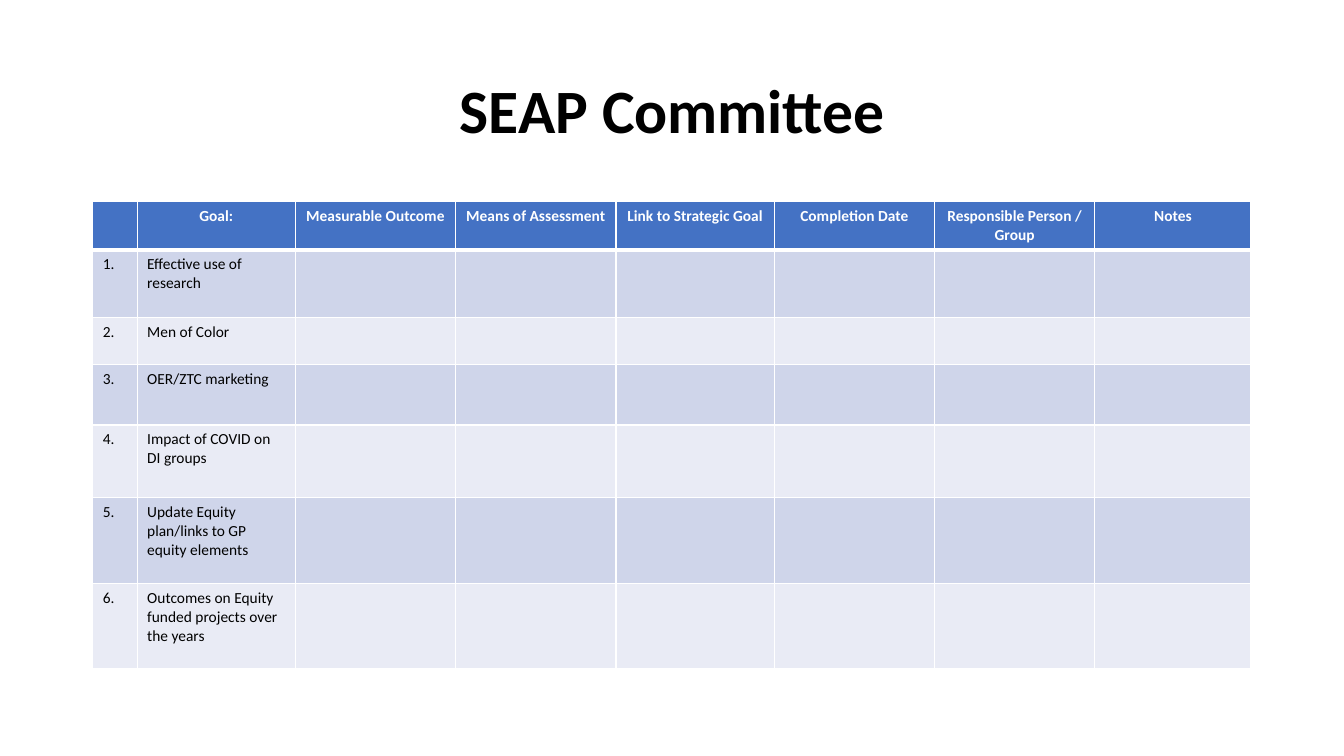
from dataclasses import dataclass

from lxml import etree
from pptx import Presentation
from pptx import util as u
from pptx.dml.color import RGBColor
from pptx.enum import text
from pptx.oxml.ns import qn

FONT = "Calibri"
COLORS = {
    "title": "000000",
    "header": "4472C4",
    "header_text": "FFFFFF",
    "odd_row": "CFD5EA",
    "even_row": "E9EBF5",
    "body_text": "000000",
    "border": "FFFFFF",
}


@dataclass(frozen=True)
class Column:
    heading: str
    width: float


@dataclass(frozen=True)
class Goal:
    wording: str
    height: float


@dataclass(frozen=True)
class CellStyle:
    fill: str
    color: str
    bold: bool
    align: text.PP_ALIGN
    bottom_border: float


COLUMNS = [
    Column("", 0.44),
    Column("Goal:", 1.57),
    Column("Measurable Outcome", 1.59),
    Column("Means of Assessment", 1.59),
    Column("Link to Strategic Goal", 1.57),
    Column("Completion Date", 1.59),
    Column("Responsible Person / Group", 1.59),
    Column("Notes", 1.55),
]
GOALS = [
    Goal("Effective use of research", 0.67),
    Goal("Men of Color", 0.47),
    Goal("OER/ZTC marketing", 0.6),
    Goal("Impact of COVID on DI groups", 0.72),
    Goal("Update Equity plan/links to GP equity elements", 0.85),
    Goal("Outcomes on Equity funded projects over the years", 0.85),
]
HEADER_HEIGHT = 0.47

HEADER = CellStyle(COLORS["header"], COLORS["header_text"], True, text.PP_ALIGN.CENTER, 3)
ODD_ROW = CellStyle(COLORS["odd_row"], COLORS["body_text"], False, text.PP_ALIGN.LEFT, 1)
EVEN_ROW = CellStyle(COLORS["even_row"], COLORS["body_text"], False, text.PP_ALIGN.LEFT, 1)


def format_paragraph(paragraph, size: float, color: str, bold: bool,
                     align: text.PP_ALIGN) -> None:
    paragraph.alignment = align
    font = paragraph.font
    font.name, font.size, font.bold = FONT, u.Pt(size), bold
    font.color.rgb = RGBColor.from_string(color)


def add_borders(cell, top: float, bottom: float) -> None:
    properties = cell._tc.get_or_add_tcPr()
    widths = {"a:lnL": 1, "a:lnR": 1, "a:lnT": top, "a:lnB": bottom}
    for position, (side, width) in enumerate(widths.items()):
        line = etree.Element(qn(side), w=str(u.Pt(width)))
        solid = etree.SubElement(line, qn("a:solidFill"))
        etree.SubElement(solid, qn("a:srgbClr"), val=COLORS["border"])
        properties.insert(position, line)


def fill_row(table, index: int, height: float, wordings: list[str],
             style: CellStyle, top_border: float) -> None:
    table.rows[index].height = u.Inches(height)
    for cell, wording in zip(table.rows[index].cells, wordings):
        cell.fill.solid()
        cell.fill.fore_color.rgb = RGBColor.from_string(style.fill)
        add_borders(cell, top_border, style.bottom_border)
        if wording:
            cell.text = wording
            format_paragraph(cell.text_frame.paragraphs[0], 11, style.color,
                             style.bold, style.align)


def add_title(slide, wording: str) -> None:
    title = slide.shapes.title
    title.left, title.top = u.Inches(0.92), u.Inches(0.4)
    title.width, title.height = u.Inches(11.5), u.Inches(1.45)
    title.text_frame.text = wording
    title.text_frame.vertical_anchor = text.MSO_ANCHOR.MIDDLE
    heading = title.text_frame.paragraphs[0]
    format_paragraph(heading, 44, COLORS["title"], True, text.PP_ALIGN.CENTER)
    heading.line_spacing = 0.9


def add_goals_table(slide) -> None:
    height = HEADER_HEIGHT + sum(goal.height for goal in GOALS)
    table = slide.shapes.add_table(
        len(GOALS) + 1, len(COLUMNS), u.Inches(0.92), u.Inches(2),
        u.Inches(11.5), u.Inches(height)).table
    for grid_column, column in zip(table.columns, COLUMNS):
        grid_column.width = u.Inches(column.width)

    # Header row
    fill_row(table, 0, HEADER_HEIGHT, [column.heading for column in COLUMNS], HEADER, 1)

    # Numbered goals, with the other columns left open
    open_cells = [""] * (len(COLUMNS) - 2)
    for number, goal in enumerate(GOALS, start=1):
        style = ODD_ROW if number % 2 else EVEN_ROW
        top_border = HEADER.bottom_border if number == 1 else 1
        fill_row(table, number, goal.height,
                 [f"{number}.", goal.wording, *open_cells], style, top_border)


def main() -> None:
    deck = Presentation()
    deck.slide_width, deck.slide_height = u.Inches(13.33), u.Inches(7.5)
    slide = deck.slides.add_slide(deck.slide_layouts[5])
    add_title(slide, "SEAP Committee")
    add_goals_table(slide)
    deck.save("out.pptx")


if __name__ == "__main__":
    main()
